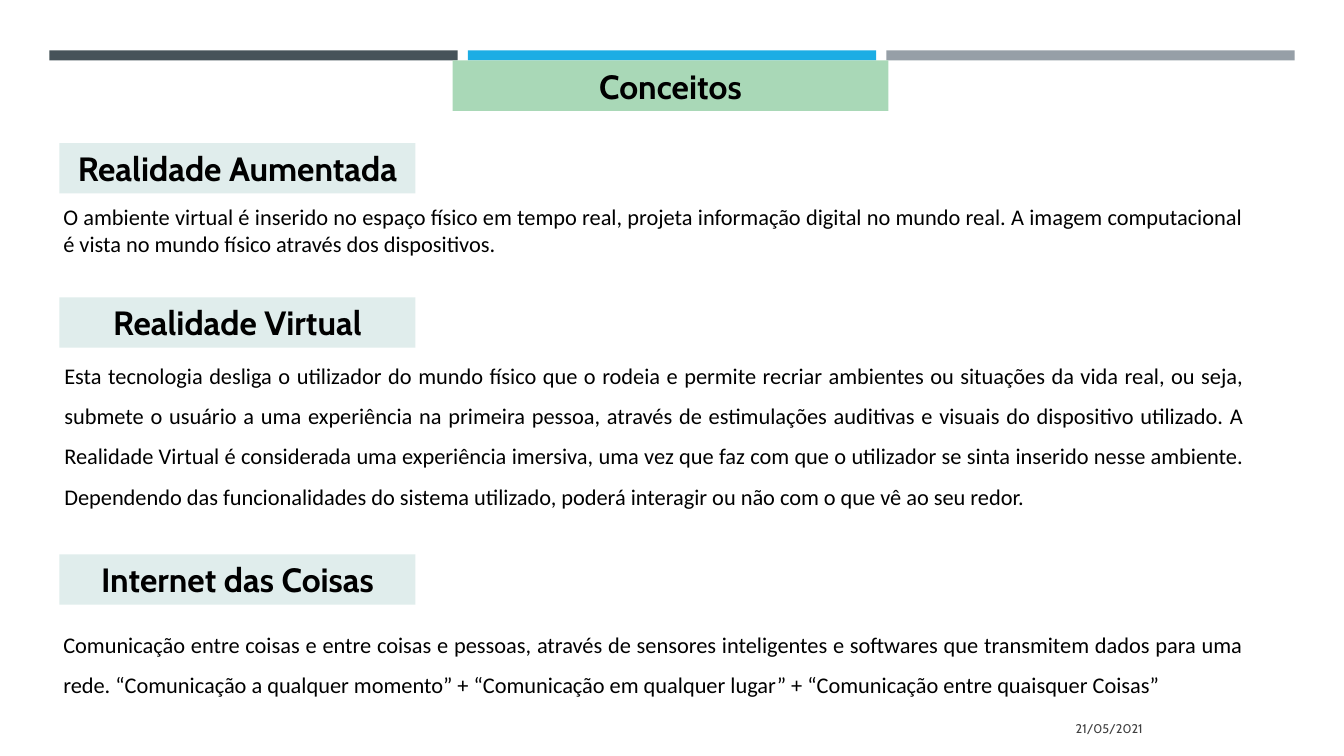
import pptx
import pptx.dml.color
import pptx.enum.shapes
import pptx.enum.text
import pptx.util

RGBColor = pptx.dml.color.RGBColor
ALIGN = pptx.enum.text.PP_ALIGN
ANCHOR = pptx.enum.text.MSO_ANCHOR

SCALE = 9144
BLACK = RGBColor(0x00, 0x00, 0x00)
DATE_GREY = RGBColor(0x40, 0x40, 0x40)
SLATE = RGBColor(0x46, 0x53, 0x59)
BLUE = RGBColor(0x1C, 0xAD, 0xE4)
GREY = RGBColor(0x96, 0x9F, 0xA7)
GREEN = RGBColor(0xA9, 0xD8, 0xB7)
PALE = RGBColor(0xE0, 0xED, 0xEC)

HEADING = {"size": pptx.util.Pt(24), "name": "Cabin", "bold": True}
BODY = {"size": pptx.util.Pt(16), "name": "Calibri"}
DATE = {"size": pptx.util.Pt(9), "name": "Cabin"}

CONCEPTS = [
    {
        "title": "Realidade Aumentada",
        "top": 142,
        "body_box": (53, 197, 1190, 64),
        "spacing": {},
        "text": "O ambiente virtual é inserido no espaço físico em tempo real, projeta "
                "informação digital no mundo real. A imagem computacional é vista no mundo "
                "físico através dos dispositivos.",
    },
    {
        "title": "Realidade Virtual",
        "top": 295,
        "body_box": (54, 341, 1190, 167),
        "spacing": {"line_spacing": 1.5, "space_after": pptx.util.Pt(8)},
        "text": "Esta tecnologia desliga o utilizador do mundo físico que o rodeia e permite "
                "recriar ambientes ou situações da vida real, ou seja, submete o usuário a uma "
                "experiência na primeira pessoa, através de estimulações auditivas e visuais do "
                "dispositivo utilizado. A Realidade Virtual é considerada uma experiência "
                "imersiva, uma vez que faz com que o utilizador se sinta inserido nesse "
                "ambiente. Dependendo das funcionalidades do sistema utilizado, poderá "
                "interagir ou não com o que vê ao seu redor.",
    },
    {
        "title": "Internet das Coisas",
        "top": 550,
        "body_box": (53, 608, 1190, 87),
        "spacing": {"line_spacing": 1.5},
        "text": "Comunicação entre coisas e entre coisas e pessoas, através de sensores "
                "inteligentes e softwares que transmitem dados para uma rede. “Comunicação a "
                "qualquer momento” + “Comunicação em qualquer lugar” + “Comunicação entre "
                "quaisquer Coisas”",
    },
]


def px(*lengths):
    return [pptx.util.Emu(length * SCALE) for length in lengths]


def apply(target, values):
    for name, value in values.items():
        setattr(target, name, value)


def add_rectangle(slide, box, fill):
    shape = slide.shapes.add_shape(pptx.enum.shapes.MSO_SHAPE.RECTANGLE, *px(*box))
    shape.shadow.inherit = False
    shape.fill.solid()
    shape.fill.fore_color.rgb = fill
    shape.line.fill.background()
    return shape


def write(shape, text, font, alignment, color=BLACK, anchor=ANCHOR.TOP, spacing={}):
    apply(shape.text_frame, {"word_wrap": True, "vertical_anchor": anchor})
    paragraph = shape.text_frame.paragraphs[0]
    apply(paragraph, {"alignment": alignment, **spacing})
    run = paragraph.add_run()
    run.text = text
    apply(run.font, font)
    run.font.color.rgb = color


def add_bars(slide, box):
    left, top, width, height = box
    gap = 10
    bar_width = (width - 2 * gap) // 3
    for index, fill in enumerate((SLATE, BLUE, GREY)):
        bar_left = left + index * (bar_width + gap)
        add_rectangle(slide, (bar_left, top, bar_width, height), fill)


def add_heading(slide, box, text, fill):
    write(add_rectangle(slide, box, fill), text, HEADING, ALIGN.CENTER)


def add_concept(slide, concept):
    add_heading(slide, (59, concept["top"], 353, 50), concept["title"], PALE)
    body = slide.shapes.add_textbox(*px(*concept["body_box"]))
    write(body, concept["text"], BODY, ALIGN.JUSTIFY, spacing=concept["spacing"])


def add_date(slide, box):
    date = slide.shapes.add_textbox(*px(*box))
    write(date, "21/05/2021", DATE, ALIGN.RIGHT, DATE_GREY, ANCHOR.MIDDLE)


def main():
    presentation = pptx.Presentation()
    slide_width, slide_height = px(1333, 750)
    apply(presentation, {"slide_width": slide_width, "slide_height": slide_height})
    slide = presentation.slides.add_slide(presentation.slide_layouts[6])
    add_bars(slide, (49, 50, 1235, 10))
    add_date(slide, (832, 703, 311, 40))
    add_heading(slide, (449, 60, 432, 50), "Conceitos", GREEN)
    for concept in CONCEPTS:
        add_concept(slide, concept)
    presentation.save("out.pptx")


if __name__ == "__main__":
    main()
